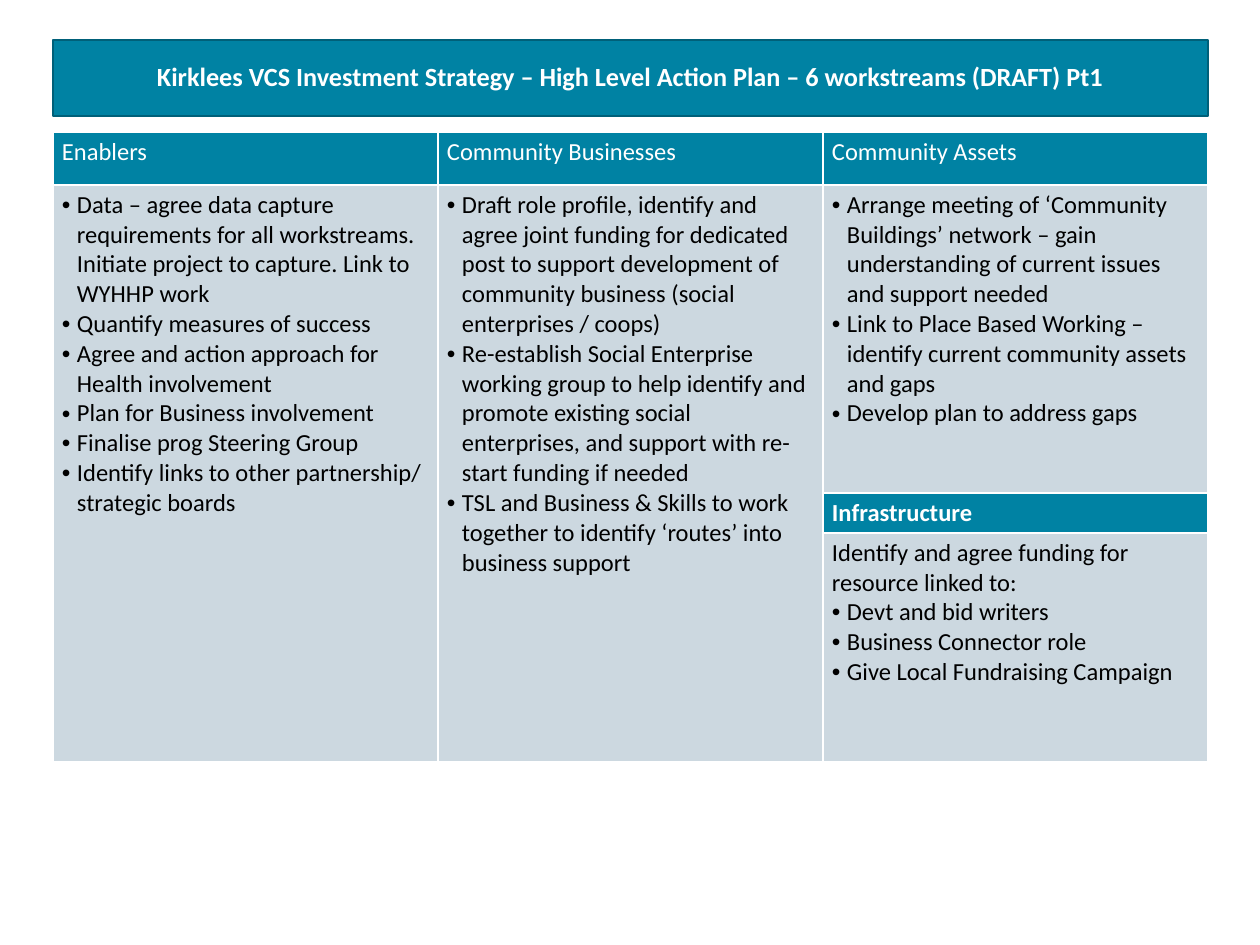
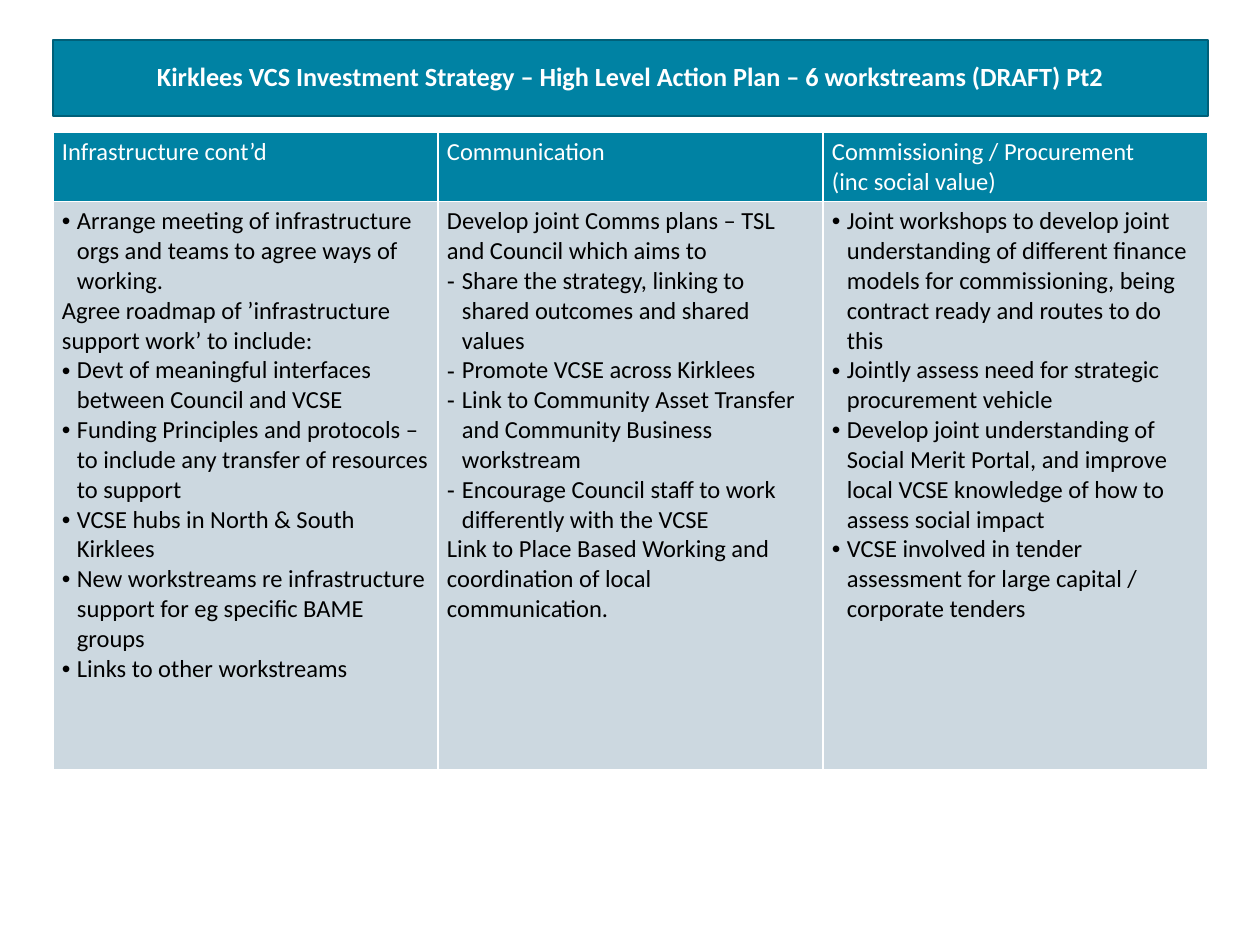
"""Build the two-part action plan: a title band over a table of workstreams on each slide."""
from lxml import etree
from pptx import Presentation
from pptx.dml.color import RGBColor
from pptx.enum.text import MSO_ANCHOR, PP_ALIGN
from pptx.oxml.ns import qn
from pptx.util import Emu, Pt

MIDDLE = MSO_ANCHOR.MIDDLE
CENTER = PP_ALIGN.CENTER
PX = 914400 / 126
FONT = "Calibri"
TEAL = RGBColor(0x00, 0x82, 0xA3)
DARK_TEAL = RGBColor(0x00, 0x60, 0x79)
PALE = RGBColor(0xCC, 0xD8, 0xE0)
WHITE = RGBColor(0xFF, 0xFF, 0xFF)
BLACK = RGBColor(0x00, 0x00, 0x00)
LEFT, BAND_TOP, BAND_HEIGHT, TABLE_TOP = 53, 40, 76, 132
COLUMN_WIDTH, HANG = 385, 15
TITLE = "Kirklees VCS Investment Strategy – High Level Action Plan – 6 workstreams (DRAFT) "

PLANS = [
    ("Pt1", [53, 308, 40, 229], [
        [("Enablers", [
            "• Data – agree data capture requirements for all workstreams. "
            "Initiate project to capture. Link to WYHHP work",
            "• Quantify measures of success",
            "• Agree and action approach for Health involvement",
            "• Plan for Business involvement",
            "• Finalise prog Steering Group",
            "• Identify links to other partnership/ strategic boards"])],
        [("Community Businesses", [
            "• Draft role profile, identify and agree joint funding for dedicated post "
            "to support development of community business (social enterprises / coops)",
            "• Re-establish Social Enterprise working group to help identify and promote "
            "existing social enterprises, and support with re-start funding if needed",
            "• TSL and Business & Skills to work together to identify ‘routes’ "
            "into business support"])],
        [("Community Assets", [
            "• Arrange meeting of ‘Community Buildings’ network – gain understanding "
            "of current issues and support needed",
            "• Link to Place Based Working – identify current community assets and gaps",
            "• Develop plan to address gaps"]),
         ("Infrastructure", [
             "Identify and agree funding for resource linked to:",
             "• Devt and bid writers",
             "• Business Connector role",
             "• Give Local Fundraising Campaign"])],
    ]),
    ("Pt2", [69, 568], [
        [("Infrastructure cont’d", [
            "• Arrange meeting of infrastructure orgs and teams to agree ways of working.",
            "Agree roadmap of ’infrastructure support work’ to include:",
            "• Devt of meaningful interfaces between Council and VCSE",
            "• Funding Principles and protocols – to include any transfer of resources to support",
            "• VCSE hubs in North & South Kirklees",
            "• New workstreams re infrastructure support for eg specific BAME groups",
            "• Links to other workstreams"])],
        [("Communication", [
            "Develop joint Comms plans – TSL and Council which aims to",
            "- Share the strategy, linking to shared outcomes and shared values",
            "- Promote VCSE across Kirklees",
            "- Link to Community Asset Transfer and Community Business workstream",
            "- Encourage Council staff to work differently with the VCSE",
            "Link to Place Based Working and coordination of local communication."])],
        [("Commissioning / Procurement\n(inc social value)", [
            "• Joint workshops to develop joint understanding of different finance models "
            "for commissioning, being contract ready and routes to do this",
            "• Jointly assess need for strategic procurement vehicle",
            "• Develop joint understanding of Social Merit Portal, and improve local VCSE "
            "knowledge of how to assess social impact",
            "• VCSE involved in tender assessment for large capital / corporate tenders"])],
    ]),
]


def px(length):
    return Emu(round(length * PX))


def fill_cell(cell, lines, background, color, bold=False):
    cell.margin_left = cell.margin_right = px(9)
    cell.margin_top = cell.margin_bottom = px(5)
    properties = cell._tc.get_or_add_tcPr()
    for side in ("a:lnL", "a:lnR", "a:lnT", "a:lnB"):
        border = etree.SubElement(properties, qn(side), w=str(Pt(1)))
        solid = etree.SubElement(border, qn("a:solidFill"))
        etree.SubElement(solid, qn("a:srgbClr"), val=str(WHITE))
    cell.fill.solid()
    cell.fill.fore_color.rgb = background
    for index, line in enumerate(lines):
        frame = cell.text_frame
        paragraph = frame.add_paragraph() if index else frame.paragraphs[0]
        if line[:2] in ("• ", "- "):
            marks = paragraph._p.get_or_add_pPr()
            marks.set("marL", str(px(HANG)))
            marks.set("indent", str(-px(HANG)))
            etree.SubElement(marks, qn("a:buFont"), typeface="Arial")
            etree.SubElement(marks, qn("a:buChar"), char=line[0])
            line = line[2:]
        paragraph.text = line
        paragraph.font.name = FONT
        paragraph.font.size = Pt(14)
        paragraph.font.bold = bold
        paragraph.font.color.rgb = color


deck = Presentation()
deck.slide_width = px(1260)
deck.slide_height = px(945)

for part, row_heights, columns in PLANS:
    slide = deck.slides.add_slide(deck.slide_layouts[5])
    width = COLUMN_WIDTH * len(columns)

    band = slide.shapes.title
    band.left, band.top = px(LEFT), px(BAND_TOP)
    band.width, band.height = px(width), px(BAND_HEIGHT)
    band.fill.solid()
    band.fill.fore_color.rgb = TEAL
    band.line.color.rgb = DARK_TEAL
    band.line.width = Pt(1)
    band.text_frame.vertical_anchor = MIDDLE
    heading_line = band.text_frame.paragraphs[0]
    heading_line.text = TITLE + part
    heading_line.alignment = CENTER
    heading_line.line_spacing = 0.9
    heading_line.font.name = FONT
    heading_line.font.size = Pt(15)
    heading_line.font.bold = True
    heading_line.font.color.rgb = WHITE

    workstreams = slide.shapes.add_table(
        len(row_heights), len(columns), px(LEFT), px(TABLE_TOP),
        px(width), px(sum(row_heights))).table
    for row, height in zip(workstreams.rows, row_heights):
        row.height = px(height)

    last_row = len(row_heights) - 1
    for column, sections in enumerate(columns):
        workstreams.columns[column].width = px(COLUMN_WIDTH)
        for number, (heading, actions) in enumerate(sections):
            head_row = 2 * number
            body_row = head_row + 1
            end_row = last_row if number == len(sections) - 1 else body_row
            fill_cell(workstreams.cell(head_row, column), heading.split("\n"),
                      TEAL, WHITE, bold=number > 0)
            body = workstreams.cell(body_row, column)
            fill_cell(body, actions, PALE, BLACK)
            for spanned_row in range(body_row + 1, end_row + 1):
                fill_cell(workstreams.cell(spanned_row, column), [], PALE, BLACK)
            if end_row > body_row:
                body.merge(workstreams.cell(end_row, column))

deck.save("out.pptx")
